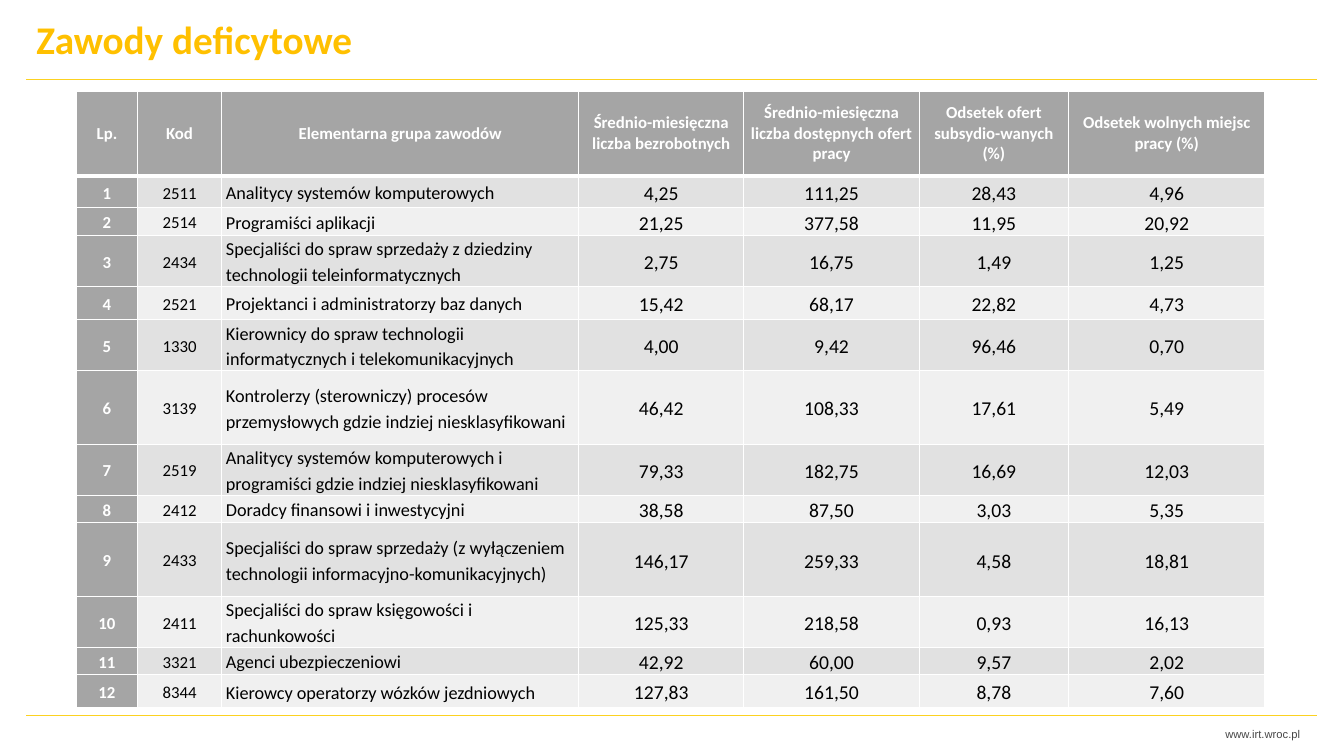
from lxml.etree import SubElement
from pptx import Presentation
from pptx.dml.color import RGBColor
from pptx.enum.shapes import MSO_CONNECTOR
from pptx.enum.text import MSO_ANCHOR, PP_ALIGN
from pptx.oxml.ns import qn
from pptx.util import Pt

# Content
TITLE = "Zawody deficytowe"
WEBSITE = "www.irt.wroc.pl"
HEADER = (
    "Lp.", "Kod", "Elementarna grupa zawodów",
    "Średnio-miesięczna liczba bezrobotnych",
    "Średnio-miesięczna liczba dostępnych ofert pracy",
    "Odsetek ofert subsydio-wanych (%)",
    "Odsetek wolnych miejsc pracy (%)",
)
OCCUPATIONS = [
    ("2511", "Analitycy systemów komputerowych", "4,25", "111,25", "28,43", "4,96"),
    ("2514", "Programiści aplikacji", "21,25", "377,58", "11,95", "20,92"),
    ("2434", "Specjaliści do spraw sprzedaży z dziedziny technologii teleinformatycznych",
     "2,75", "16,75", "1,49", "1,25"),
    ("2521", "Projektanci i administratorzy baz danych", "15,42", "68,17", "22,82", "4,73"),
    ("1330", "Kierownicy do spraw technologii informatycznych i telekomunikacyjnych",
     "4,00", "9,42", "96,46", "0,70"),
    ("3139", "Kontrolerzy (sterowniczy) procesów przemysłowych gdzie indziej niesklasyfikowani",
     "46,42", "108,33", "17,61", "5,49"),
    ("2519", "Analitycy systemów komputerowych i programiści gdzie indziej niesklasyfikowani",
     "79,33", "182,75", "16,69", "12,03"),
    ("2412", "Doradcy finansowi i inwestycyjni", "38,58", "87,50", "3,03", "5,35"),
    ("2433", "Specjaliści do spraw sprzedaży (z wyłączeniem technologii informacyjno-komunikacyjnych)",
     "146,17", "259,33", "4,58", "18,81"),
    ("2411", "Specjaliści do spraw księgowości i rachunkowości",
     "125,33", "218,58", "0,93", "16,13"),
    ("3321", "Agenci ubezpieczeniowi", "42,92", "60,00", "9,57", "2,02"),
    ("8344", "Kierowcy operatorzy wózków jezdniowych", "127,83", "161,50", "8,78", "7,60"),
]

# Style and measures, in points
COLORS = {
    "title": "FFC000", "rule": "FCD221", "website": "464646",
    "head": "A5A5A5", "odd": "E1E1E1", "even": "F0F0F0",
    "white": "FFFFFF", "black": "000000",
}
TABLE_LEFT, TABLE_TOP = 54.8, 65
COLUMN_WIDTHS = (43.2, 60.5, 254.9, 118, 125.3, 106.6, 140.4)
COLUMN_SIZES = (12, 12, 13, 14, 14, 14, 14)
ROW_HEIGHTS = (60.5, 23, 18.7, 36, 23.8, 35.3, 52.6, 36, 18.7, 52.6, 34.6, 18.7, 23.8)
RULE_LEFT, RULE_RIGHT = 18.7, 941
RULE_TOPS = (56.9, 511.2)
GROUP_COLUMN = 2


def color(name):
    return RGBColor.from_string(COLORS[name])


def write(frame, text, font, size, tint, bold=False, align=PP_ALIGN.LEFT):
    frame.word_wrap = True
    frame.text = text
    para = frame.paragraphs[0]
    para.alignment = align
    span = para.runs[0]
    span.font.name, span.font.size, span.font.bold = font, Pt(size), bold
    span.font.color.rgb = color(tint)
    return para


def clear_margins(frame):
    frame.margin_left = frame.margin_right = 0
    frame.margin_top = frame.margin_bottom = 0


def add_borders(cell, widths):
    properties = cell._tc.get_or_add_tcPr()
    for side, width in widths.items():
        border = SubElement(properties, qn(f"a:ln{side}"), w=str(Pt(width)))
        fill = SubElement(border, qn("a:solidFill"))
        SubElement(fill, qn("a:srgbClr"), val=COLORS["white"])


def fill_cell(cell, text, row, column):
    is_head = row == 0 or column == 0
    align = PP_ALIGN.LEFT if row and column == GROUP_COLUMN else PP_ALIGN.CENTER
    size = COLUMN_SIZES[column] if row else 12
    para = write(cell.text_frame, text, "Calibri", size,
                 "white" if is_head else "black", is_head, align)
    if row:
        para.line_spacing = 1.15
    cell.vertical_anchor = MSO_ANCHOR.MIDDLE
    cell.margin_left = cell.margin_right = Pt(2.9)
    cell.margin_top = cell.margin_bottom = 0
    add_borders(cell, {"L": 1, "R": 1, "T": 3 if row == 1 else 1, "B": 1 if row else 3})
    cell.fill.solid()
    cell.fill.fore_color.rgb = color("head" if is_head else "odd" if row % 2 else "even")


deck = Presentation()
deck.slide_width, deck.slide_height = Pt(960), Pt(540)
page = deck.slides.add_slide(deck.slide_layouts[5])

# Title
title = page.shapes.title
title.left, title.top, title.width, title.height = Pt(25.9), Pt(10.8), Pt(859), Pt(31)
clear_margins(title.text_frame)
title.text_frame.vertical_anchor = MSO_ANCHOR.TOP
write(title.text_frame, TITLE, "Calibri", 28, "title", True)

# Rules above and below the table
for top in RULE_TOPS:
    rule = page.shapes.add_connector(
        MSO_CONNECTOR.STRAIGHT, Pt(RULE_LEFT), Pt(top), Pt(RULE_RIGHT), Pt(top))
    rule.line.color.rgb = color("rule")
    rule.line.width = Pt(0.5)
    SubElement(rule._element.spPr, qn("a:effectLst"))

# Table of occupations
rows = [HEADER] + [(str(number), *entry) for number, entry in enumerate(OCCUPATIONS, 1)]
table = page.shapes.add_table(
    len(rows), len(HEADER), Pt(TABLE_LEFT), Pt(TABLE_TOP),
    Pt(sum(COLUMN_WIDTHS)), Pt(sum(ROW_HEIGHTS))).table
for column, width in zip(table.columns, COLUMN_WIDTHS):
    column.width = Pt(width)
for row, height in zip(table.rows, ROW_HEIGHTS):
    row.height = Pt(height)
for row, texts in enumerate(rows):
    for column, text in enumerate(texts):
        fill_cell(table.cell(row, column), text, row, column)

# Website in the footer
website = page.shapes.add_textbox(Pt(817.2), Pt(519.8), Pt(111.6), Pt(9.4))
clear_margins(website.text_frame)
write(website.text_frame, WEBSITE, "Arial", 8, "website", align=PP_ALIGN.RIGHT)

deck.save("out.pptx")
